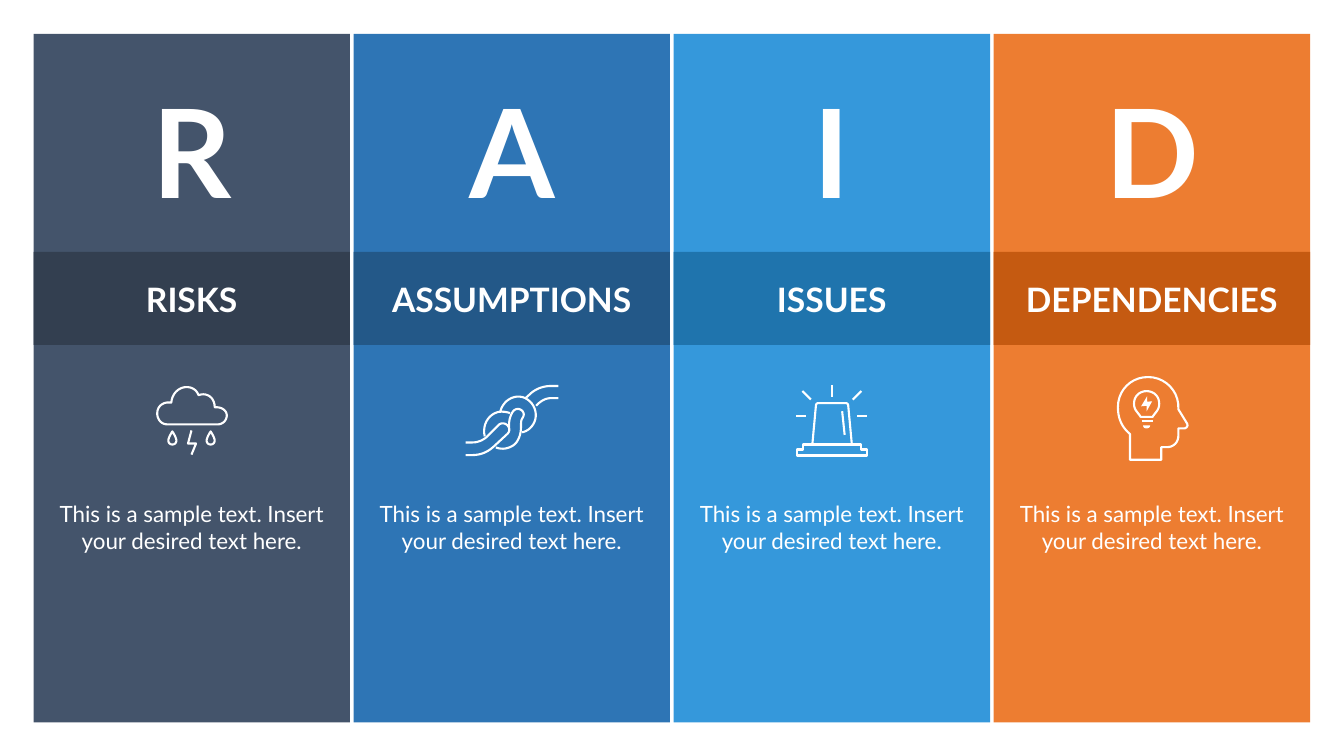
from dataclasses import dataclass

from pptx import Presentation
from pptx.dml.color import RGBColor
from pptx.enum.shapes import MSO_SHAPE
from pptx.enum.text import MSO_ANCHOR, PP_ALIGN
from pptx.util import Pt

RECT = MSO_SHAPE.RECTANGLE
CENTER = PP_ALIGN.CENTER
TOP, MIDDLE = MSO_ANCHOR.TOP, MSO_ANCHOR.MIDDLE

FONT = "Lato"
WHITE = "FFFFFF"
SAMPLE = "This is a sample text. Insert your desired text here."

LEFT, PITCH, COLUMN_WIDTH = 24, 228.6, 226
COLUMN_TOP, COLUMN_HEIGHT = 24.3, 491.8
BAND_TOP, BAND_HEIGHT = 180, 66.4

ICON_UNIT = 0.72  # points per icon grid step
ICON_LINE = 1.5
CURVE_STEPS = 10


@dataclass(frozen=True)
class Stroke:
    """Outline in M/L/C/Z commands on the icon grid, shifted right by dx."""
    outline: str
    dx: float = 0
    filled: bool = False


@dataclass(frozen=True)
class Icon:
    dx: float
    top: float
    strokes: tuple[Stroke, ...]


@dataclass(frozen=True)
class Column:
    letter: str
    heading: str
    color: str
    band_color: str
    icon: Icon


@dataclass(frozen=True)
class TextStyle:
    dx: float
    top: float
    width: float
    height: float
    size: float
    bold: bool
    anchor: MSO_ANCHOR
    inset_x: float = 0
    inset_y: float = 0


LETTER = TextStyle(17.4, 50.4, 191.5, 113.8, 88, True, TOP, 7.2, 3.6)
HEADING = TextStyle(18.6, 191.5, 188.6, 44.6, 24, True, MIDDLE)
BODY = TextStyle(17.6, 357.1, 190.8, 133.9, 16, False, TOP)

DROP = ("M16,45 C18,48 20,52 20,54 C20,56.5 18,58 16,58 "
        "C14,58 12,56.5 12,54 C12,52 14,48 16,45 Z")

STORM_CLOUD = Icon(87.6, 275.8, (
    Stroke("M11,38 C5,38 1,33 1,27 C1,20 7,15 15,16.5 C15.5,8 22,1 30,1 "
           "C36,1 40,4 42,9 C50,6 58,11 58,21 C66,20.5 70,25 70,29 "
           "C70,34 66,38 61,38 Z"),
    Stroke("M35,44 L31.5,57 L39.5,57 L35,68"),
    Stroke(DROP),
    Stroke(DROP, dx=38),
))

KNOT = Icon(80, 275, (
    Stroke("M92,1 L85,1 C77,1 69,4 64,9 L60,12.5"),
    Stroke("M92,13 L85,13 C80,13 76,15 72,18.5 L70,20.5"),
    Stroke("M0,57 L7,57 C12,57 17,55 21,51.5 L33,39.5 "
           "C35,37.5 39,37.5 41.5,40 C44,42.5 44,46 41.5,48.5 "
           "L28,61 C22,66.5 15,69.5 7,69.5 L0,69.5"),
    Stroke("M34.5,26 C37,16 47,9.5 56.5,12 C66,15 71.5,25 69,34.5 "
           "C67,41 62.5,45.5 56,47"),
    Stroke("M44,28 C41,26.5 35,26 31.5,27 C22,30 16.5,40 19,51"),
    Stroke("M30,62 C38,65 46,62 50,57.5 C54,52 55,47 55,40 "
           "C55,37 55,35.5 56,33.5 C58.5,30 58,27.5 56,25.5 "
           "C53,22.5 48.5,23.5 46.5,27 C44,31.5 43,35 43,42"),
))

SIREN = Icon(87.6, 275, (
    Stroke("M16,58 L19.5,20.5 C19.5,19 20.5,18 22,18 L49,18 "
           "C50.5,18 51.5,19 51.5,20.5 L55,58"),
    Stroke("M1,70 L1,64 L7,64 L7,59 L64,59 L64,64 L70,64 L70,70 Z"),
    Stroke("M45.5,26 L48,49.5"),
    Stroke("M35,0 L35,12"),
    Stroke("M0,31 L10,31"),
    Stroke("M0,31 L10,31", dx=60.5),
    Stroke("M6,6 L14.5,14.5"),
    Stroke("M64.5,6 L56,14.5"),
))

IDEA_HEAD = Icon(88, 268.6, (
    Stroke("M13,57.5 L13,83 L44,83 L44,70.5 L50,70.5 C56,70.5 61,66 61,59 "
           "L61,52 L67,52 C70,51 71,49 69,46 L61,33 C62,15 48,1 31,1 "
           "C14,1 1,14 1,31 C1,42 5,51 13,57.5 Z"),
    Stroke("M23.5,40.5 C21,36 17,34 17,27.5 C17,20 22.5,15 29.5,15 "
           "C36.5,15 42,20 42,27.5 C42,34 38,36 35.5,40.5 Z"),
    Stroke("M24.5,45 L35.5,45"),
    Stroke("M26,49 L33,49 C33,51 31.5,52 29.5,52 C27.5,52 26,51 26,49 Z",
           filled=True),
    Stroke("M30,20 L24,30 L29.5,29.5 L29.5,35 L35,25 L30,25.5 Z", filled=True),
))

COLUMNS = (
    Column("R", "RISKS", "44546B", "333F50", STORM_CLOUD),
    Column("A", "ASSUMPTIONS", "2E75B5", "235888", KNOT),
    Column("I", "ISSUES", "3598DB", "1F74AD", SIREN),
    Column("D", "DEPENDENCIES", "ED7D31", "C55A11", IDEA_HEAD),
)


def paint(fill, color: str) -> None:
    fill.solid()
    fill.fore_color.rgb = RGBColor.from_string(color)


def add_block(slide, left: float, top: float, height: float, color: str) -> None:
    sp = slide.shapes.add_shape(RECT, Pt(left), Pt(top), Pt(COLUMN_WIDTH), Pt(height))
    sp.shadow.inherit = False
    paint(sp.fill, color)
    sp.line.fill.background()


def add_text(slide, left: float, text: str, style: TextStyle) -> None:
    sp = slide.shapes.add_textbox(Pt(left + style.dx), Pt(style.top),
                                  Pt(style.width), Pt(style.height))
    tf = sp.text_frame
    tf.word_wrap = True
    tf.vertical_anchor = style.anchor
    tf.margin_left = tf.margin_right = Pt(style.inset_x)
    tf.margin_top = tf.margin_bottom = Pt(style.inset_y)
    tf.text = text
    p = tf.paragraphs[0]
    p.alignment = CENTER
    font = p.runs[0].font
    font.name, font.size, font.bold = FONT, Pt(style.size), style.bold
    paint(font.fill, WHITE)


def trace(outline: str) -> list[tuple[float, float]]:
    """Turn outline commands into points, sampling each cubic curve."""
    commands = []
    for token in outline.removesuffix(" Z").split():
        if token[0].isalpha():
            commands.append([])
        x, y = token.lstrip("MLC").split(",")
        commands[-1].append((float(x), float(y)))
    points = []
    for ends in commands:
        if len(ends) == 1:
            points += ends
            continue
        controls = [points[-1], *ends]
        for step in range(1, CURVE_STEPS + 1):
            t = step / CURVE_STEPS
            weights = ((1 - t) ** 3, 3 * t * (1 - t) ** 2, 3 * t * t * (1 - t), t ** 3)
            points.append((sum(w * c[0] for w, c in zip(weights, controls)),
                           sum(w * c[1] for w, c in zip(weights, controls))))
    return points


def add_icon(slide, left: float, icon: Icon) -> None:
    for stroke in icon.strokes:
        points = [(Pt(left + icon.dx + (x + stroke.dx) * ICON_UNIT),
                   Pt(icon.top + y * ICON_UNIT)) for x, y in trace(stroke.outline)]
        builder = slide.shapes.build_freeform(*points[0])
        builder.add_line_segments(points[1:], close=stroke.outline.endswith("Z"))
        sp = builder.convert_to_shape()
        sp.shadow.inherit = False
        if stroke.filled:
            paint(sp.fill, WHITE)
            sp.line.fill.background()
        else:
            sp.fill.background()
            paint(sp.line.fill, WHITE)
            sp.line.width = Pt(ICON_LINE)


def main() -> None:
    prs = Presentation()
    prs.slide_width, prs.slide_height = Pt(960), Pt(540)
    slide = prs.slides.add_slide(prs.slide_layouts.get_by_name("Blank"))
    for i, column in enumerate(COLUMNS):
        left = LEFT + i * PITCH
        add_block(slide, left, COLUMN_TOP, COLUMN_HEIGHT, column.color)
        add_block(slide, left, BAND_TOP, BAND_HEIGHT, column.band_color)
        add_text(slide, left, column.letter, LETTER)
        add_text(slide, left, column.heading, HEADING)
        add_text(slide, left, SAMPLE, BODY)
        add_icon(slide, left, column.icon)
    prs.save("out.pptx")


if __name__ == "__main__":
    main()
